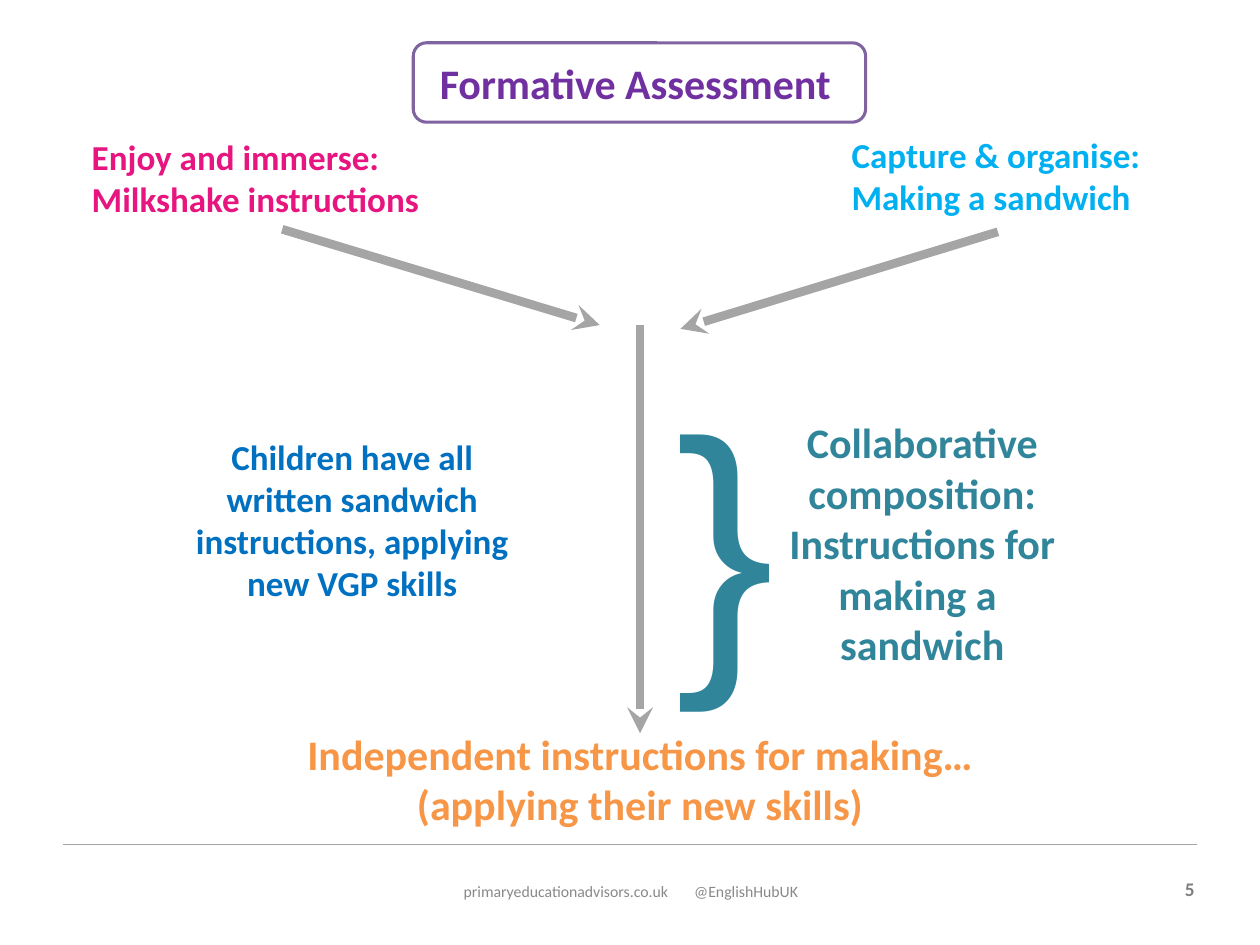
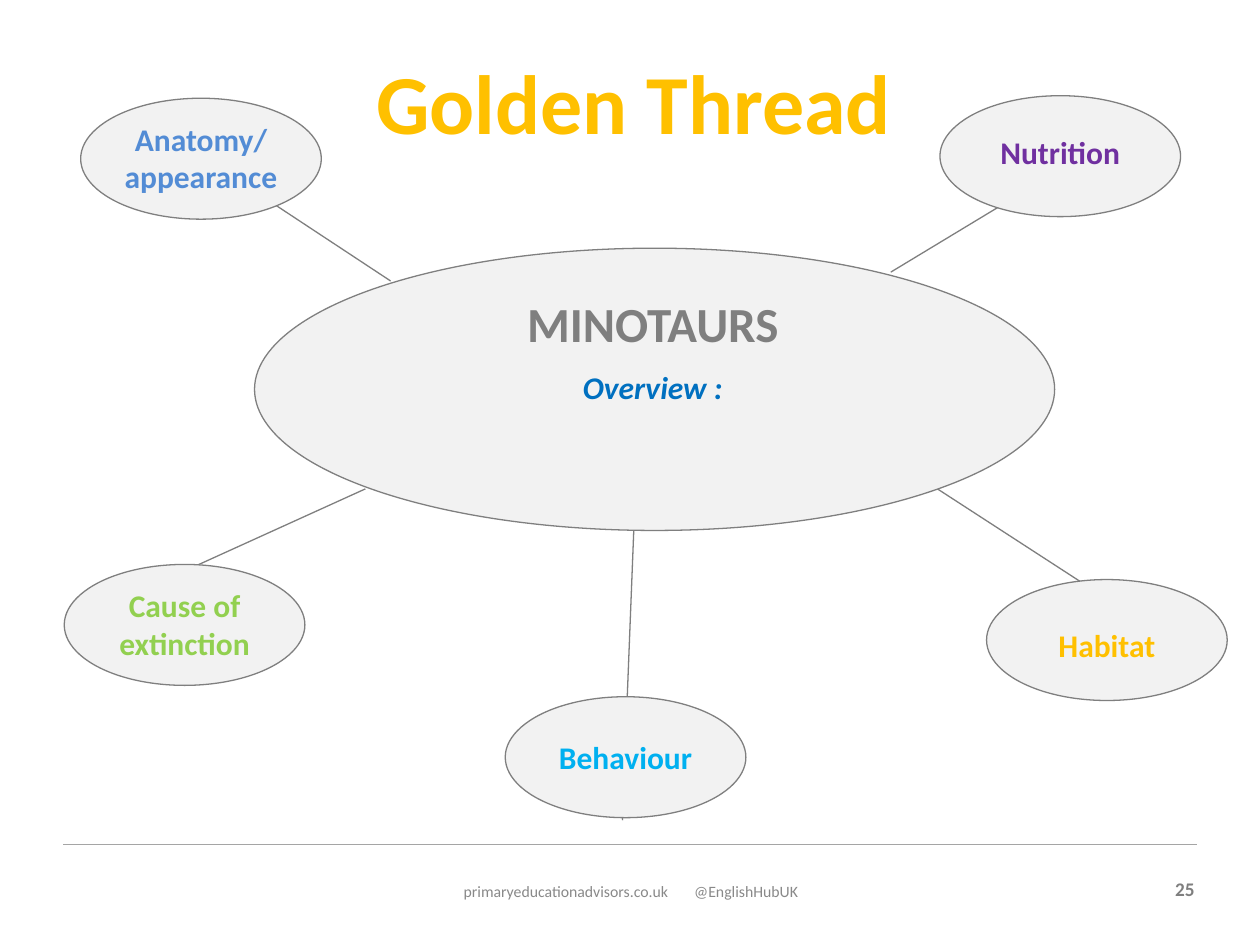
"""Build two teaching slides: a formative assessment flow and a golden thread topic map."""
from lxml import etree
from pptx import Presentation
from pptx.dml.color import RGBColor
from pptx.enum import shapes, text
from pptx.oxml import ns
from pptx.util import Inches, Pt


class Theme:
    font = "Calibri"
    brace_font = "Arial"
    white, pale = "FFFFFF", "F2F2F2"
    grey, footer_grey, arrow_grey = "7F7F7F", "898989", "A5A5A5"
    pink, sky, blue, soft_blue = "E6157F", "00B0F0", "0070C0", "538CD5"
    teal, orange, gold, green = "31859B", "F79646", "FFC000", "92D050"
    purple, frame_purple = "7030A0", "8064A2"
    headline, heading, overview, body, label = 48, 24, 28, 20, 18
    number, footer, brace = 11, 9, 170
    hairline, frame_line, arrow = 0.75, 1.75, 5


CENTER, LEFT, RIGHT = text.PP_ALIGN.CENTER, text.PP_ALIGN.LEFT, text.PP_ALIGN.RIGHT


def write(holder, box, wording, size, color, align=CENTER, bold=True, font=Theme.font):
    holder.left, holder.top, holder.width, holder.height = map(Inches, box)
    frame = holder.text_frame
    frame.text = wording
    frame.word_wrap = True
    frame.auto_size = text.MSO_AUTO_SIZE.NONE
    frame.vertical_anchor = text.MSO_ANCHOR.TOP
    for paragraph in frame.paragraphs:
        paragraph.alignment = align
        for run in paragraph.runs:
            run.font.name, run.font.size, run.font.bold = font, Pt(size), bold
            run.font.color.rgb = RGBColor.from_string(color)
    return frame


def connect(slide, start, end, color, width, arrowhead=False):
    link = slide.shapes.add_connector(
        shapes.MSO_CONNECTOR.STRAIGHT, *map(Inches, (*start, *end)))
    link.line.color.rgb = RGBColor.from_string(color)
    link.line.width = Pt(width)
    if arrowhead:
        etree.SubElement(link.line._get_or_add_ln(), ns.qn("a:tailEnd"), type="stealth")
    etree.SubElement(link.element.spPr, ns.qn("a:effectLst"))


deck = Presentation()
deck.slide_width, deck.slide_height = Inches(10), Inches(7.5)
blank_box = [0] * 4

headings = [
    ("5", "Formative Assessment ", (1.29, 0.41, 7.58, 0.51), Theme.heading, Theme.purple),
    ("25", "Golden Thread", (1.88, 0.35, 6.3, 0.91), Theme.headline, Theme.gold),
]
for number, heading, box, size, color in headings:
    slide = deck.slides.add_slide(deck.slide_layouts[5])
    write(slide.shapes.title, box, heading, size, color)
    connect(slide, (0.5, 6.7), (9.5, 6.7), Theme.arrow_grey, Theme.hairline)
    write(slide.shapes.add_textbox(*blank_box), (9.2, 6.91, 0.38, 0.29),
          number, Theme.number, Theme.grey, RIGHT)
    contact = write(slide.shapes.add_textbox(*blank_box), (3.31, 6.95, 3.38, 0.4),
                    "primaryeducationadvisors.co.uk\t@EnglishHubUK",
                    Theme.footer, Theme.footer_grey, LEFT, bold=False)
    contact.margin_left = Inches(0.37)
    tabs = etree.SubElement(contact.paragraphs[0]._p.get_or_add_pPr(), ns.qn("a:tabLst"))
    etree.SubElement(tabs, ns.qn("a:tab"), pos=str(Inches(1.83)), algn="l")

assessment, thread = deck.slides

heading_frame = assessment.shapes.add_shape(
    shapes.MSO_SHAPE.ROUNDED_RECTANGLE, *map(Inches, (3.28, 0.34, 3.59, 0.63)))
heading_frame.shadow.inherit = False
heading_frame.fill.solid()
heading_frame.fill.fore_color.rgb = RGBColor.from_string(Theme.white)
heading_frame.line.color.rgb = RGBColor.from_string(Theme.frame_purple)
heading_frame.line.width = Pt(Theme.frame_line)
assessment.shapes.title.element.addprevious(heading_frame.element)

stages = [
    ((0.63, 1.03, 2.84, 0.77), "Enjoy and immerse:\nMilkshake instructions",
     Theme.body, Theme.pink, LEFT),
    ((6.66, 1.01, 2.91, 0.77), "Capture & organise:\vMaking a sandwich",
     Theme.body, Theme.sky, LEFT),
    ((1.3, 3.41, 2.99, 1.45),
     "Children have all written sandwich instructions, applying new VGP skills",
     Theme.body, Theme.blue, CENTER),
    ((6.02, 3.26, 2.6, 2.52),
     "Collaborative composition:\nInstructions for\nmaking a \nsandwich",
     Theme.heading, Theme.teal, CENTER),
    ((1.22, 5.73, 7.72, 0.57),
     "Independent instructions for making…\n(applying their new skills)",
     Theme.heading, Theme.orange, CENTER),
]
for box, wording, size, color, align in stages:
    write(assessment.shapes.add_textbox(*blank_box), box, wording, size, color, align)

brace = write(assessment.shapes.add_textbox(*blank_box), (5.26, 2.54, 0.47, 2.96), "}",
              Theme.brace, Theme.teal, LEFT, bold=False, font=Theme.brace_font)
brace.margin_top = Inches(0.26)

for start, end in [((5.08, 2.58), (5.08, 5.82)),
                   ((2.24, 1.82), (4.76, 2.58)),
                   ((7.92, 1.84), (5.4, 2.61))]:
    connect(assessment, start, end, Theme.arrow_grey, Theme.arrow, arrowhead=True)

for start, end in [((2.16, 1.61), (3.1, 2.23)),
                   ((7.07, 2.16), (8.46, 1.32)),
                   ((2.9, 3.88), (0.83, 4.82)),
                   ((7.44, 3.88), (9.29, 5.08)),
                   ((5.03, 4.21), (4.94, 6.51))]:
    connect(thread, start, end, Theme.grey, Theme.hairline)

topic_width, topic_height = 1.91, 0.96
topics = [
    ("Anatomy/ appearance", 0.64, 0.78, 0.9, 0.71, Theme.soft_blue),
    ("Nutrition", 7.46, 0.76, 1.01, 0.4, Theme.purple),
    ("Cause of extinction", 0.51, 4.48, 4.6, 0.71, Theme.green),
    ("Behaviour", 4.01, 5.53, 5.81, 0.4, Theme.sky),
    ("Habitat", 7.83, 4.6, 4.92, 0.4, Theme.gold),
]
bubbles = [(2.02, 1.97, 6.35, 2.24)]
bubbles += [(left, top, topic_width, topic_height) for _, left, top, *_ in topics]
for box in bubbles:
    bubble = thread.shapes.add_shape(shapes.MSO_SHAPE.OVAL, *map(Inches, box))
    bubble.shadow.inherit = False
    bubble.fill.solid()
    bubble.fill.fore_color.rgb = RGBColor.from_string(Theme.pale)
    bubble.line.color.rgb = RGBColor.from_string(Theme.grey)
    bubble.line.width = Pt(Theme.hairline)

for topic, left, _, label_top, label_height, color in topics:
    write(thread.shapes.add_textbox(*blank_box), (left, label_top, topic_width, label_height),
          topic, Theme.label, color)

subject = write(thread.shapes.add_textbox(*blank_box), (3.54, 2.28, 3.28, 1.03),
                "MINOTAURS\nOverview :", Theme.overview, Theme.grey)
overview = subject.paragraphs[1]
overview.space_before = Pt(9)
overview_font = overview.runs[0].font
overview_font.size, overview_font.italic = Pt(Theme.label), True
overview_font.color.rgb = RGBColor.from_string(Theme.blue)

deck.save("out.pptx")
